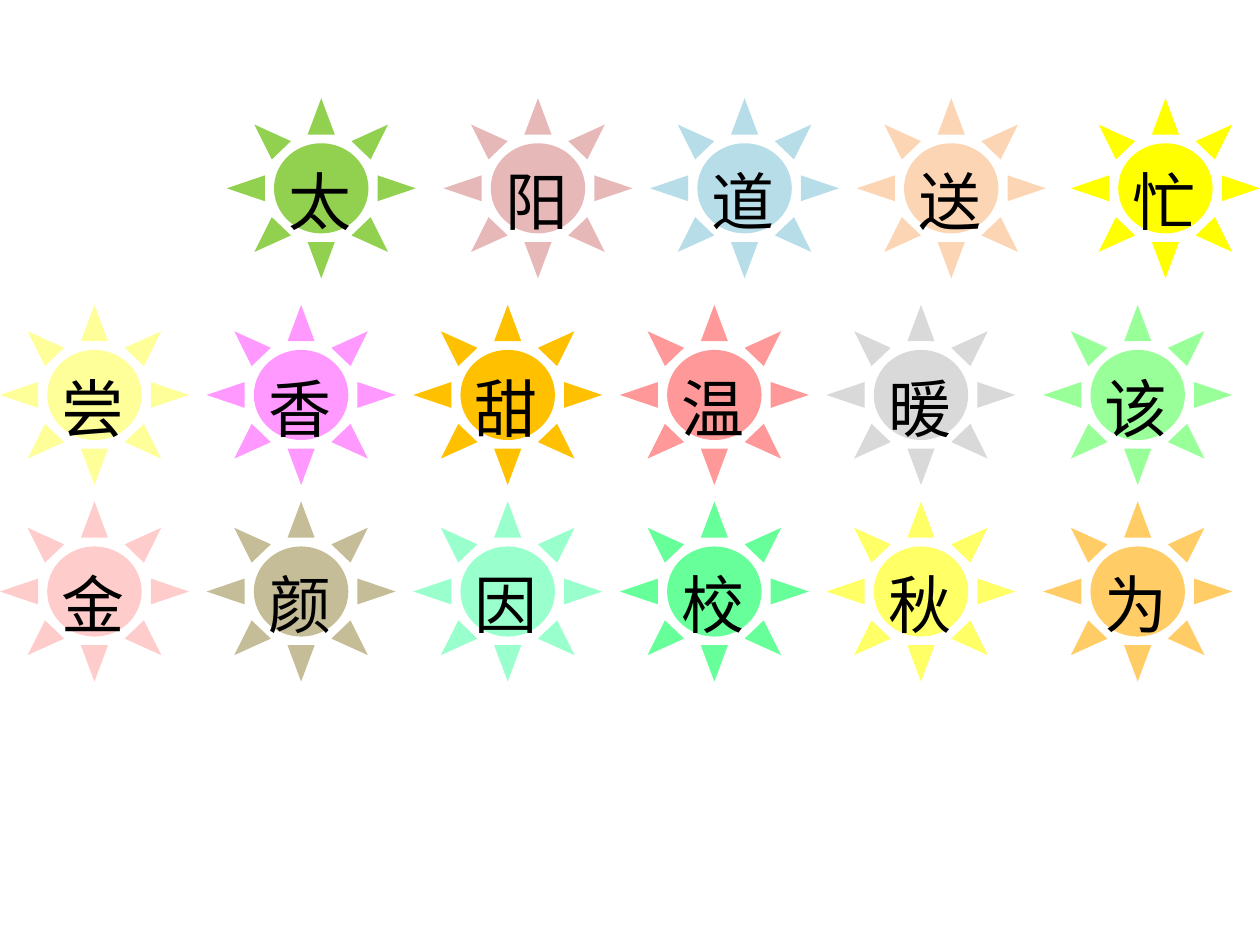
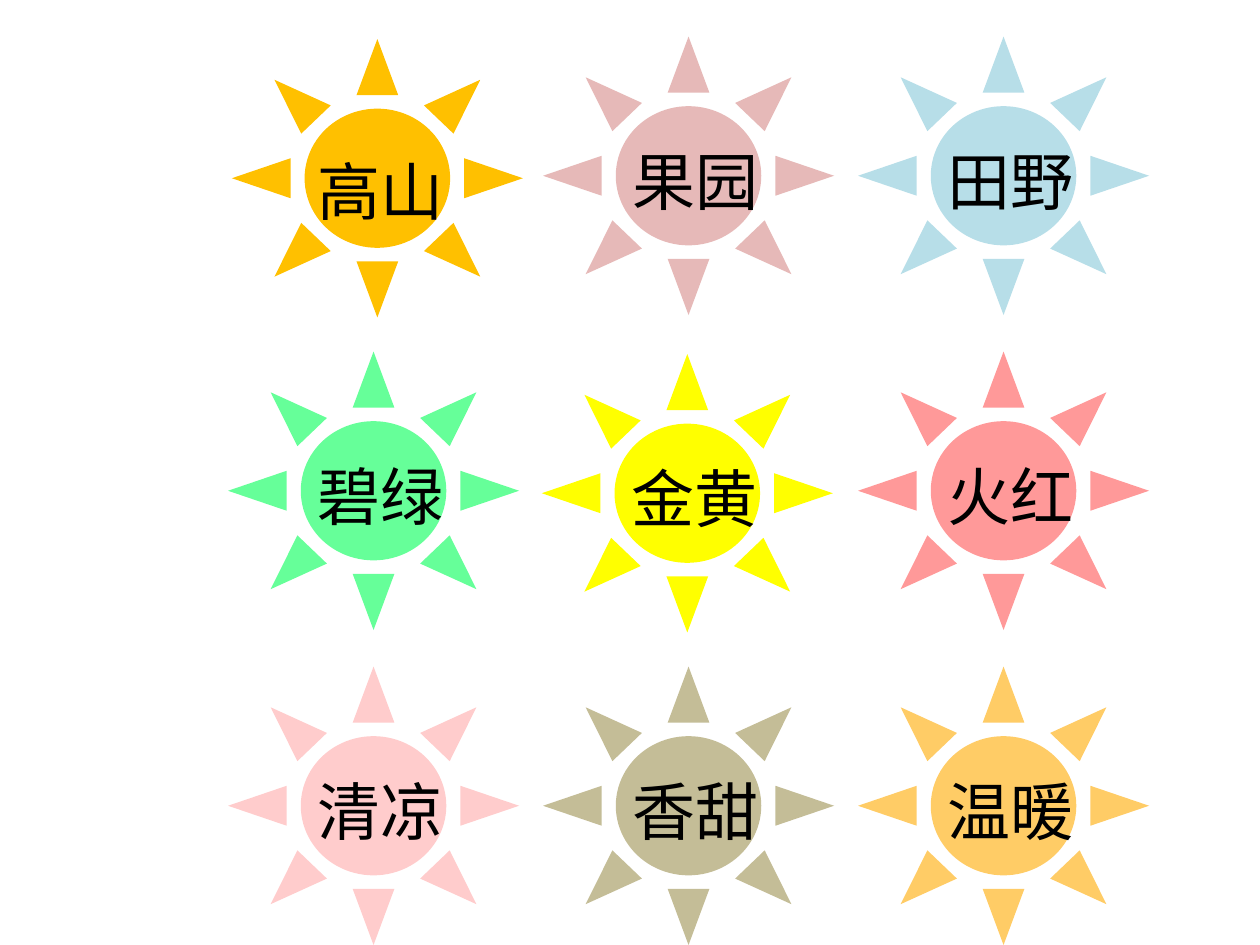
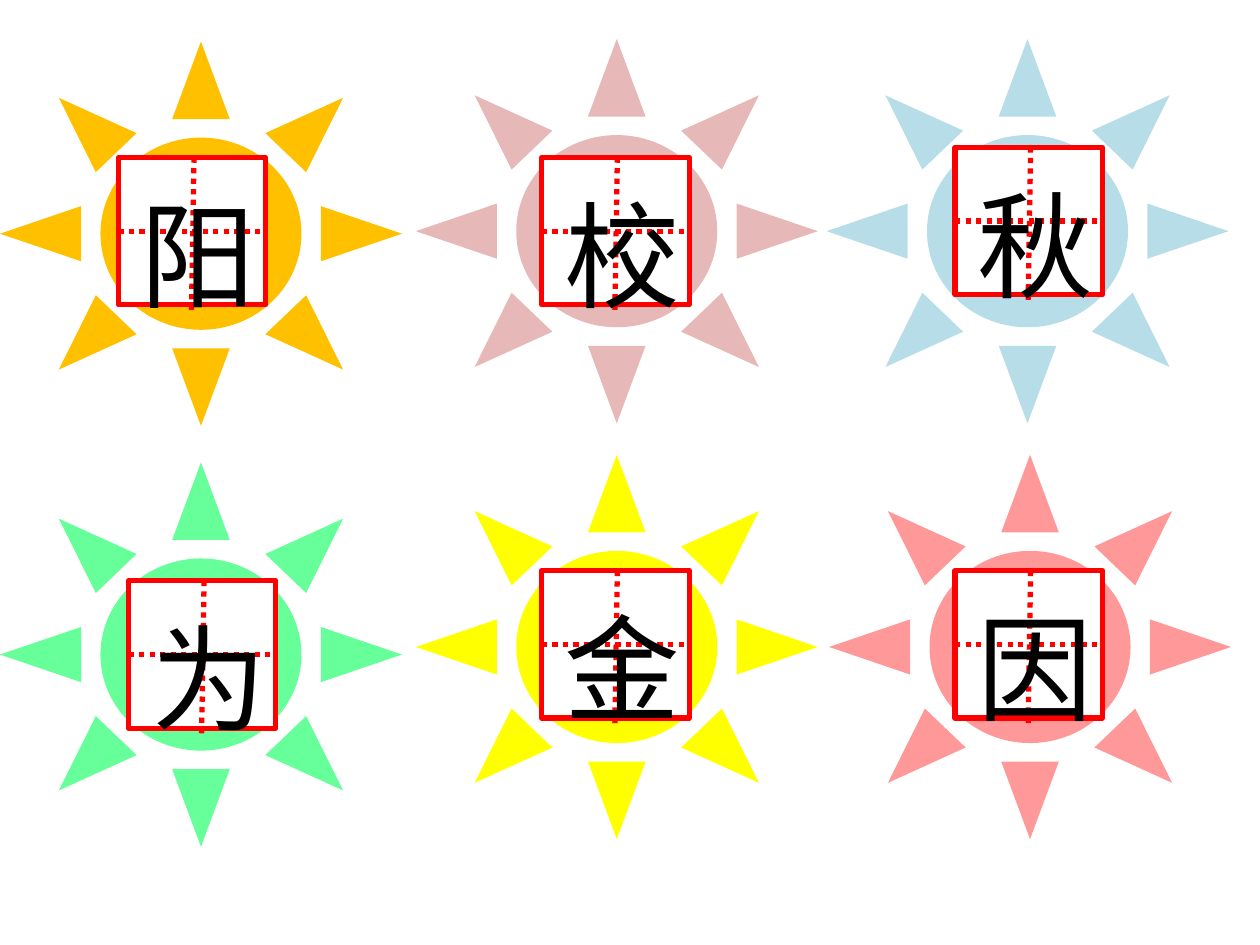
from dataclasses import dataclass

from lxml import etree
from pptx import Presentation
from pptx import util as u
from pptx.dml import color
from pptx.enum import dml, shapes, text
from pptx.oxml import ns


@dataclass(frozen=True)
class Theme:
    """Colours, type sizes and line weights shared by all slides."""
    font: str = "Noto Sans CJK SC"
    ink: str = "000000"
    paper: str = "FFFFFF"
    rule: str = "FF0000"
    rule_width: float = 3
    word_size: int = 36
    writing_size: int = 66
    line_spacing: float = 1.5
    gold: str = "FFC000"
    rose: str = "E6B9B8"
    sky: str = "B7DEE8"
    mint: str = "66FF99"
    yellow: str = "FFFF00"
    coral: str = "FF9999"
    blush: str = "FFCCCC"
    khaki: str = "C4BD97"
    amber: str = "FFCC66"
    leaf: str = "92D050"
    peach: str = "FCD5B5"
    cream: str = "FFFF99"
    orchid: str = "FF99FF"
    silver: str = "D9D9D9"
    lime: str = "99FF99"
    aqua: str = "99FFCC"
    lemon: str = "FFFF66"


THEME = Theme()


@dataclass(frozen=True)
class Grid:
    """Evenly spaced places, counted in columns and rows from an origin."""
    left: float
    top: float
    column_step: float
    row_step: float = 0

    def place(self, column, row=0, nudge=(0, 0)):
        """Return the left and top of a grid place after its nudge."""
        return (self.left + column * self.column_step + nudge[0],
                self.top + row * self.row_step + nudge[1])


@dataclass(frozen=True)
class Sun:
    """A coloured sun with its word and small departures from the grid."""
    word: str
    fill: str
    nudge: tuple = (0, 0)
    label_nudge: tuple = (0, 0)


def shift(point, offset):
    """Move a point by an offset."""
    return point[0] + offset[0], point[1] + offset[1]


def inches(*lengths):
    """Convert lengths to slide units."""
    return [u.Inches(length) for length in lengths]


def rgb(value):
    """Turn a hex value into a colour."""
    return color.RGBColor.from_string(value)


def apply(target, values):
    """Set the attributes of an object from a dict."""
    for name, value in values.items():
        setattr(target, name, value)


def add_filled(parent, kind, point, size, fill):
    """Add a flat preset shape without an outline."""
    box = parent.add_shape(kind, *inches(*point, *size))
    box.shadow.inherit = False
    box.fill.solid()
    box.fill.fore_color.rgb = rgb(fill)
    box.line.fill.background()
    return box


def add_sun(page, point, size, fill):
    """Add one sun."""
    add_filled(page.shapes, shapes.MSO_SHAPE.SUN, point, size, fill)


def add_word(page, word, point, size, points):
    """Add a word in a text box that grows with its text."""
    box = page.shapes.add_textbox(*inches(*point, *size))
    apply(box.text_frame, {"word_wrap": True,
                           "auto_size": text.MSO_AUTO_SIZE.SHAPE_TO_FIT_TEXT})
    para = box.text_frame.paragraphs[0]
    para.line_spacing = THEME.line_spacing
    span = para.add_run()
    span.text = word
    apply(span.font, {"size": u.Pt(points), "name": THEME.font})
    span.font.color.rgb = rgb(THEME.ink)
    east_asian = etree.SubElement(span._r.get_or_add_rPr(), ns.qn("a:ea"))
    east_asian.set("typeface", THEME.font)


def style_rule(line):
    """Give a line the red rule of the writing square."""
    line.color.rgb = rgb(THEME.rule)
    line.width = u.Pt(THEME.rule_width)


def add_dotted_line(parent, start, end):
    """Add a dotted red guide line."""
    line = parent.add_connector(shapes.MSO_CONNECTOR.STRAIGHT, *inches(*start, *end))
    style_rule(line.line)
    line.line.dash_style = dml.MSO_LINE.ROUND_DOT
    etree.SubElement(line._element.spPr, ns.qn("a:effectLst"))
    return line


def add_writing_square(page, point, side):
    """Add a grouped square with guide lines for one character."""
    group = page.shapes.add_group_shape().shapes
    square = add_filled(group, shapes.MSO_SHAPE.RECTANGLE, point, (side, side), THEME.paper)
    style_rule(square.line)
    middle = side / 2
    across = add_dotted_line(group, shift(point, (0, middle)), shift(point, (side, middle)))
    across.begin_connect(square, 1)
    across.end_connect(square, 3)
    add_dotted_line(group, shift(point, (0.6, 0)), shift(point, (0.58, 1.21)))


def add_labelled_suns(page, grid, suns, columns, sun_size, label_offset, label_size):
    """Add suns with their words, filling the grid row by row."""
    for index, sun in enumerate(suns):
        row, column = divmod(index, columns)
        point = grid.place(column, row, sun.nudge)
        add_sun(page, point, sun_size, sun.fill)
        label = shift(shift(point, label_offset), sun.label_nudge)
        add_word(page, sun.word, label, label_size, THEME.word_size)


def build_characters(page):
    """Build the three rows of single characters."""
    rows = [
        (Grid(0.24 - 1.64 + 3.28, 0.78, 1.64), [
            Sun("太", THEME.leaf, (-0.08, 0)), Sun("阳", THEME.rose),
            Sun("道", THEME.sky), Sun("送", THEME.peach),
            Sun("忙", THEME.yellow, (0.06, 0))]),
        (Grid(0, 2.42, 1.64), [
            Sun("尝", THEME.cream), Sun("香", THEME.orchid), Sun("甜", THEME.gold),
            Sun("温", THEME.coral), Sun("暖", THEME.silver),
            Sun("该", THEME.lime, (0.08, 0))]),
        (Grid(0, 3.98, 1.64), [
            Sun("金", THEME.blush), Sun("颜", THEME.khaki), Sun("因", THEME.aqua),
            Sun("校", THEME.mint), Sun("秋", THEME.lemon),
            Sun("为", THEME.amber, (0.08, 0))]),
    ]
    for grid, suns in rows:
        add_labelled_suns(page, grid, suns, len(suns), (1.5, 1.43), (0.39, 0.16), (1.09, 0.87))


def build_words(page):
    """Build the three by three block of two-character words."""
    suns = [
        Sun("高山", THEME.gold, (0.03, 0.02), (-0.03, 0.06)),
        Sun("果园", THEME.rose), Sun("田野", THEME.sky),
        Sun("碧绿", THEME.mint), Sun("金黄", THEME.yellow, (-0.01, 0.02)),
        Sun("火红", THEME.coral),
        Sun("清凉", THEME.blush), Sun("香甜", THEME.khaki), Sun("温暖", THEME.amber),
    ]
    add_labelled_suns(page, Grid(1.81, 0.29, 2.5, 2.5), suns, 3,
                      (2.31, 2.21), (0.61, 0.49), (1.69, 0.87))


def build_writing(page):
    """Build the suns with writing squares."""
    sun_grid = Grid(0, 0.31, 3.28, 3.3)
    square_grid = Grid(1.02, 1.25, 3.28, 3.28)
    suns = [
        Sun("阳", THEME.gold, (0, 0.02), (-0.08, 0)),
        Sun("校", THEME.rose, (0.02, 0)),
        Sun("秋", THEME.sky, (0, 0), (0, -0.08)),
        Sun("为", THEME.mint, (0, 0.06), (0, 0.08)),
        Sun("金", THEME.yellow, (0.02, 0)),
        Sun("因", THEME.coral, (0.02, 0)),
    ]
    squares = []
    for index, sun in enumerate(suns):
        row, column = divmod(index, 3)
        add_sun(page, sun_grid.place(column, row, sun.nudge), (3.19, 3.05), sun.fill)
        squares.append(square_grid.place(column, row, sun.label_nudge))
    for square in squares:
        add_writing_square(page, square, 1.17)
    for sun, square in zip(suns, squares):
        add_word(page, sun.word, shift(square, (0.08, -0.39)), (1.09, 1.51), THEME.writing_size)


def main():
    """Build and save the deck."""
    deck = Presentation()
    apply(deck, {"slide_width": u.Inches(10), "slide_height": u.Inches(7.5)})
    blank = deck.slide_layouts[6]
    for build in (build_characters, build_words, build_writing):
        build(deck.slides.add_slide(blank))
    deck.save("out.pptx")


if __name__ == "__main__":
    main()
